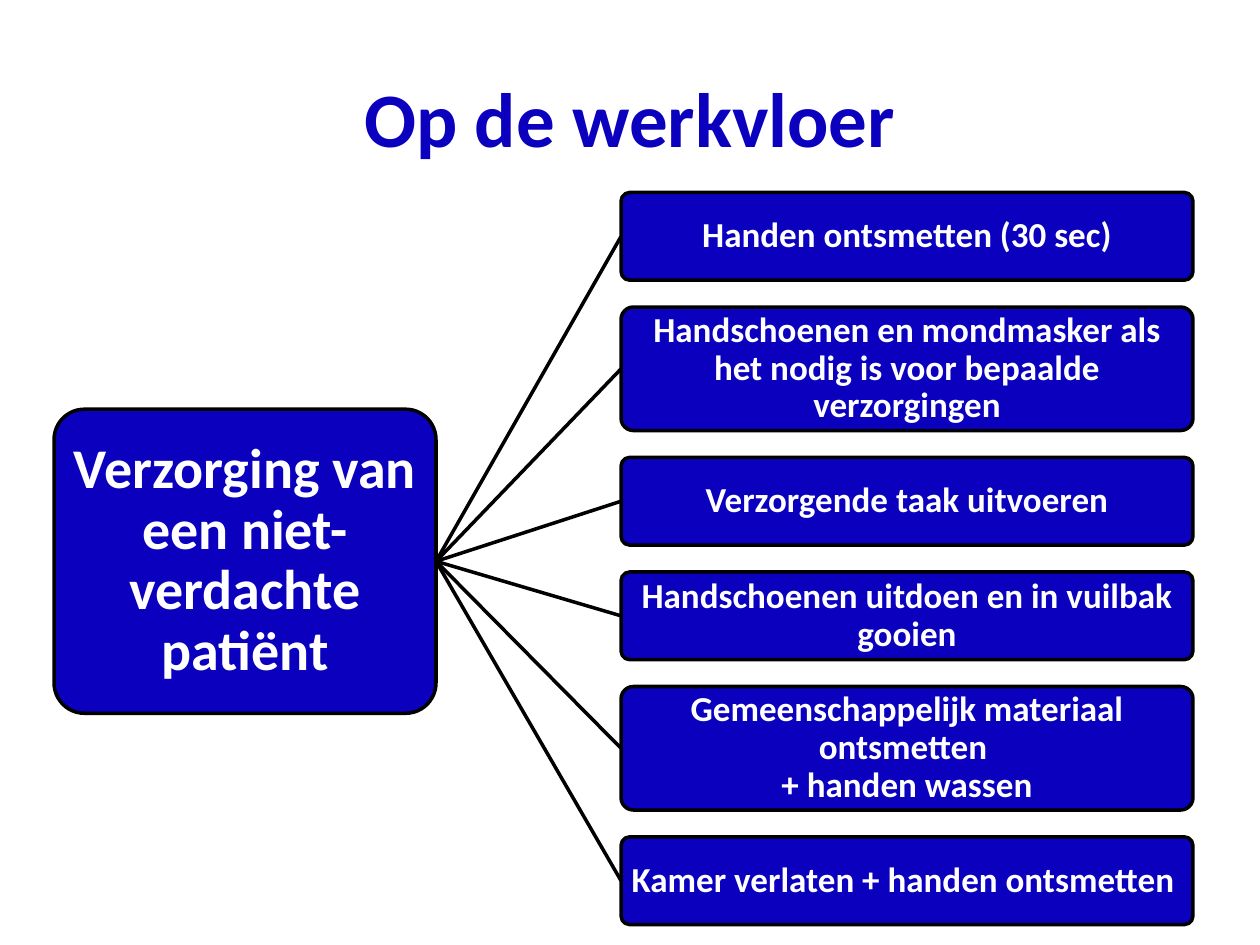
from lxml.etree import SubElement
from pptx import Presentation
from pptx.dml.color import RGBColor
from pptx.enum.shapes import MSO_CONNECTOR, MSO_SHAPE
from pptx.enum.text import MSO_ANCHOR, PP_ALIGN
from pptx.oxml.ns import qn
from pptx.util import Cm, Pt

BLUE = RGBColor(0x0A, 0x00, 0xBE)
BLACK = RGBColor(0, 0, 0)
WHITE = RGBColor(255, 255, 255)

LOW, HIGH, GAP = 1.77, 2.49, 0.54
LEFT, TOP, WIDTH = 12.52, 3.88, 11.53
ROOT = (1.09, 8.25, 7.7, 6.13)
STEPS = [
    ("Handen ontsmetten (30 sec)", LOW),
    ("Handschoenen en mondmasker als het nodig is voor bepaalde verzorgingen", HIGH),
    ("Verzorgende taak uitvoeren", LOW),
    ("Handschoenen uitdoen en in vuilbak gooien", LOW),
    ("Gemeenschappelijk materiaal ontsmetten \n+ handen wassen", HIGH),
    ("Kamer verlaten + handen ontsmetten ", LOW),
]


def apply(item, values):
    """Set each named attribute on the item."""
    for name, value in values.items():
        setattr(item, name, value)


def write(shape, text, size, color, inset, spacing):
    """Put one centred bold paragraph in the shape."""
    frame = shape.text_frame
    sides = ("left", "top", "right", "bottom")
    apply(frame, {f"margin_{side}": Cm(inset) for side in sides})
    apply(frame, {"word_wrap": True, "vertical_anchor": MSO_ANCHOR.MIDDLE})
    para = frame.paragraphs[0]
    para.text = text
    apply(para, {"alignment": PP_ALIGN.CENTER, "line_spacing": spacing})
    for run in para.runs:
        apply(run.font, {"name": "Calibri", "size": Pt(size), "bold": True})
        run.font.color.rgb = color


def stroke(line):
    """Give a line its black two-point look."""
    line.color.rgb = BLACK
    line.width = Pt(2)


def add_box(slide, place, text, size, inset):
    """Add a rounded blue box with white text."""
    box = slide.shapes.add_shape(MSO_SHAPE.ROUNDED_RECTANGLE, *map(Cm, place))
    box.adjustments[0] = 0.1
    box.shadow.inherit = False
    box.fill.solid()
    box.fill.fore_color.rgb = BLUE
    stroke(box.line)
    write(box, text, size, WHITE, inset, 0.9)


def add_link(slide, start, end):
    """Draw a straight line between two points."""
    link = slide.shapes.add_connector(
        MSO_CONNECTOR.STRAIGHT, *map(Cm, start + end))
    stroke(link.line)
    SubElement(link._element.spPr, qn("a:effectLst"))


def add_title(slide, text):
    """Place and format the slide title."""
    title = slide.shapes.title
    apply(title, {"left": Cm(1.27), "top": Cm(0.76),
                  "width": Cm(22.86), "height": Cm(3.18)})
    write(title, text, 44, BLUE, 0.25, 1.0)


def main():
    """Build the slide and save it."""
    deck = Presentation()
    apply(deck, {"slide_width": Cm(25.4), "slide_height": Cm(19.05)})
    slide = deck.slides.add_slide(deck.slide_layouts[5])
    add_title(slide, "Op de werkvloer")
    add_box(slide, ROOT, "Verzorging van een niet-verdachte patiënt", 32, 0.05)
    left, top, width, height = ROOT
    hub = (left + width, top + height / 2)
    level = TOP
    for text, tall in STEPS:
        add_link(slide, hub, (LEFT, level + tall / 2))
        add_box(slide, (LEFT, level, WIDTH, tall), text, 20, 0.03)
        level += tall + GAP
    deck.save("out.pptx")


if __name__ == "__main__":
    main()
